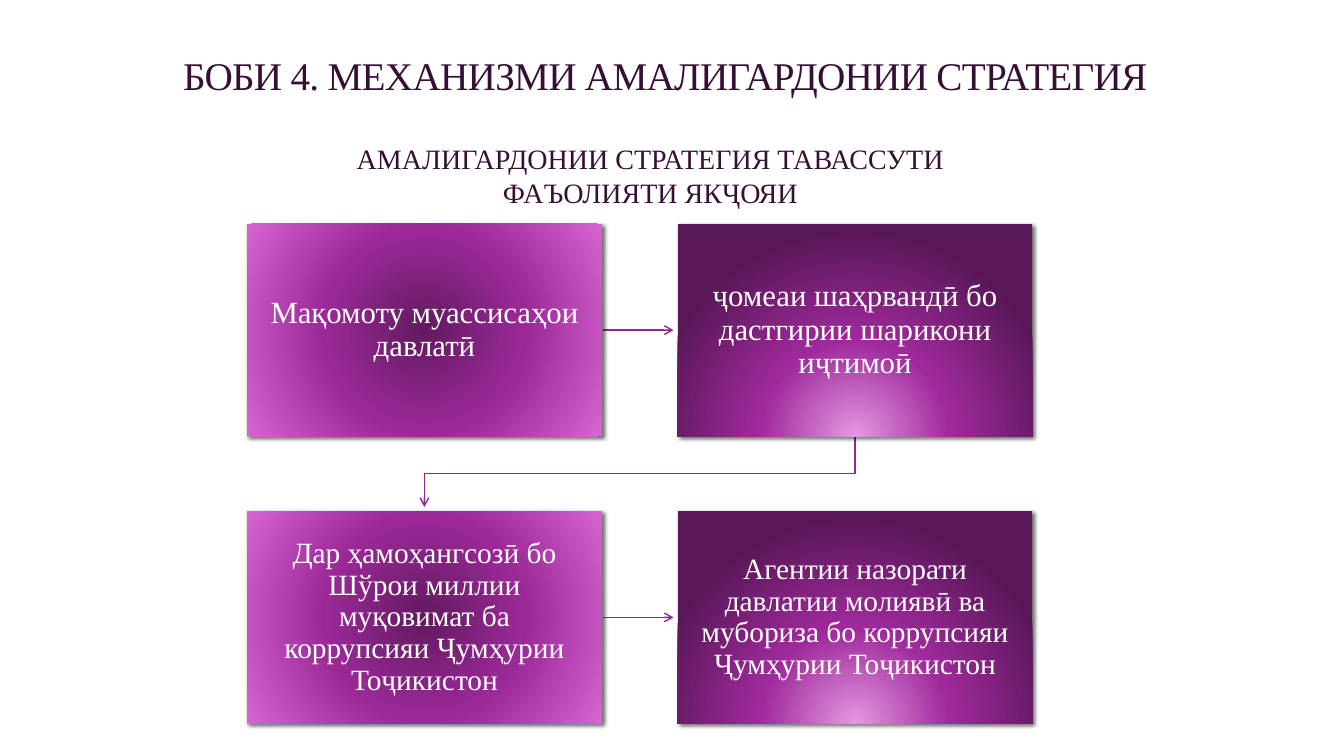
"""Builds the slide on the mechanism for carrying out the strategy."""
from lxml import etree
from pptx import Presentation
from pptx.dml.color import RGBColor
from pptx.enum.shapes import MSO_CONNECTOR as CONNECTOR, MSO_SHAPE as SHAPE
from pptx.enum.text import MSO_ANCHOR as ANCHOR, PP_ALIGN as ALIGN
from pptx.oxml import parse_xml
from pptx.oxml.ns import nsdecls, qn
from pptx.util import Inches, Pt


def color(value):
    return RGBColor.from_string(value)


def write(shape, text, size, text_color, spacing, inset_x, inset_y, anchor):
    frame = shape.text_frame
    frame.word_wrap = True
    frame.vertical_anchor = anchor
    frame.margin_left = frame.margin_right = Inches(inset_x)
    frame.margin_top = frame.margin_bottom = Inches(inset_y)
    paragraph = frame.paragraphs[0]
    paragraph.text = text
    paragraph.alignment = ALIGN.CENTER
    paragraph.line_spacing = spacing
    paragraph.font.name = "Times New Roman"
    paragraph.font.size = Pt(size)
    paragraph.font.color.rgb = color(text_color)


presentation = Presentation()
presentation.slide_width = Inches(13.33)
presentation.slide_height = Inches(7.5)
slide = presentation.slides.add_slide(presentation.slide_layouts[6])

title = slide.shapes.add_textbox(Inches(0.11), Inches(0.53), Inches(12.97), Inches(0.98))
write(title, "БОБИ 4. МЕХАНИЗМИ АМАЛИГАРДОНИИ СТРАТЕГИЯ", 28, "360F35", 0.85, 0.1, 0.05, ANCHOR.TOP)
title.text_frame.paragraphs[0].runs[0].font._element.set("spc", "-50")

subtitle = slide.shapes.add_textbox(Inches(2.77), Inches(1.24), Inches(7.36), Inches(1))
write(subtitle, "АМАЛИГАРДОНИИ СТРАТЕГИЯ ТАВАССУТИ ФАЪОЛИЯТИ ЯКҶОЯИ",
      20, "360F35", 1.0, 0.1, 0.05, ANCHOR.MIDDLE)

BOX_WIDTH, BOX_HEIGHT = 3.52, 2.11
COLUMNS = (2.45, 6.72)
ROWS = (2.22, 5.07)
GRADIENTS = (
    (((0, "621A60"), (48, "9A2997"), (100, "D665D3")), (50, 50, 50, 50)),
    (((0, "E498E1"), (46, "9F2A9C"), (100, "581756")), (50, 130, 50, -30)),
)
TEXTS = (
    ("Мақомоту муассисаҳои давлатӣ",
     "ҷомеаи шаҳрвандӣ бо дастгирии шарикони иҷтимоӣ"),
    ("Дар ҳамоҳангсозӣ бо Шўрои миллии муқовимат ба коррупсияи Ҷумҳурии Тоҷикистон",
     "Агентии назорати давлатии молиявӣ ва мубориза бо коррупсияи Ҷумҳурии Тоҷикистон"),
)

arrows = []
for top in ROWS:
    middle = Inches(top + BOX_HEIGHT / 2)
    arrows.append(slide.shapes.add_connector(
        CONNECTOR.STRAIGHT, Inches(5.98), middle, Inches(6.68), middle))

left_center, right_center = (left + BOX_WIDTH / 2 for left in COLUMNS)
bend = [(right_center, 4.33), (right_center, 4.7), (left_center, 4.7), (left_center, 5.03)]
points = [(Inches(x), Inches(y)) for x, y in bend]
builder = slide.shapes.build_freeform(*points[0])
builder.add_line_segments(points[1:], close=False)
bent_arrow = builder.convert_to_shape()
bent_arrow.fill.background()
arrows.append(bent_arrow)

for arrow in arrows:
    arrow.line.color.rgb = color("92278F")
    arrow.line.width = Pt(1)
    etree.SubElement(arrow.line._get_or_add_ln(), qn("a:tailEnd"), type="arrow")
    etree.SubElement(arrow._element.spPr, qn("a:effectLst"))

for top, row_texts, size, inset in zip(ROWS, TEXTS, (22, 21), (0.17, 0.16)):
    for left, text, (stops, focus) in zip(COLUMNS, row_texts, GRADIENTS):
        box = slide.shapes.add_shape(
            SHAPE.RECTANGLE, Inches(left), Inches(top), Inches(BOX_WIDTH), Inches(BOX_HEIGHT))
        stop_xml = "".join(
            f'<a:gs pos="{position * 1000}"><a:srgbClr val="{value}"/></a:gs>'
            for position, value in stops)
        focus_xml = " ".join(
            f'{side}="{percent * 1000}"' for side, percent in zip("ltrb", focus))
        properties = box._element.spPr
        properties.insert(2, parse_xml(
            f'<a:gradFill {nsdecls("a")} rotWithShape="1"><a:gsLst>{stop_xml}</a:gsLst>'
            f'<a:path path="circle"><a:fillToRect {focus_xml}/></a:path></a:gradFill>'))
        box.line.fill.background()
        box.shadow.inherit = False
        properties.find(qn("a:effectLst")).append(parse_xml(
            f'<a:outerShdw {nsdecls("a")} blurRad="{Pt(3)}" dist="{Pt(2)}" dir="2700000">'
            '<a:srgbClr val="000000"><a:alpha val="60000"/></a:srgbClr></a:outerShdw>'))
        write(box, text, size, "FFFFFF", 0.9, inset, inset, ANCHOR.MIDDLE)

presentation.save("out.pptx")
